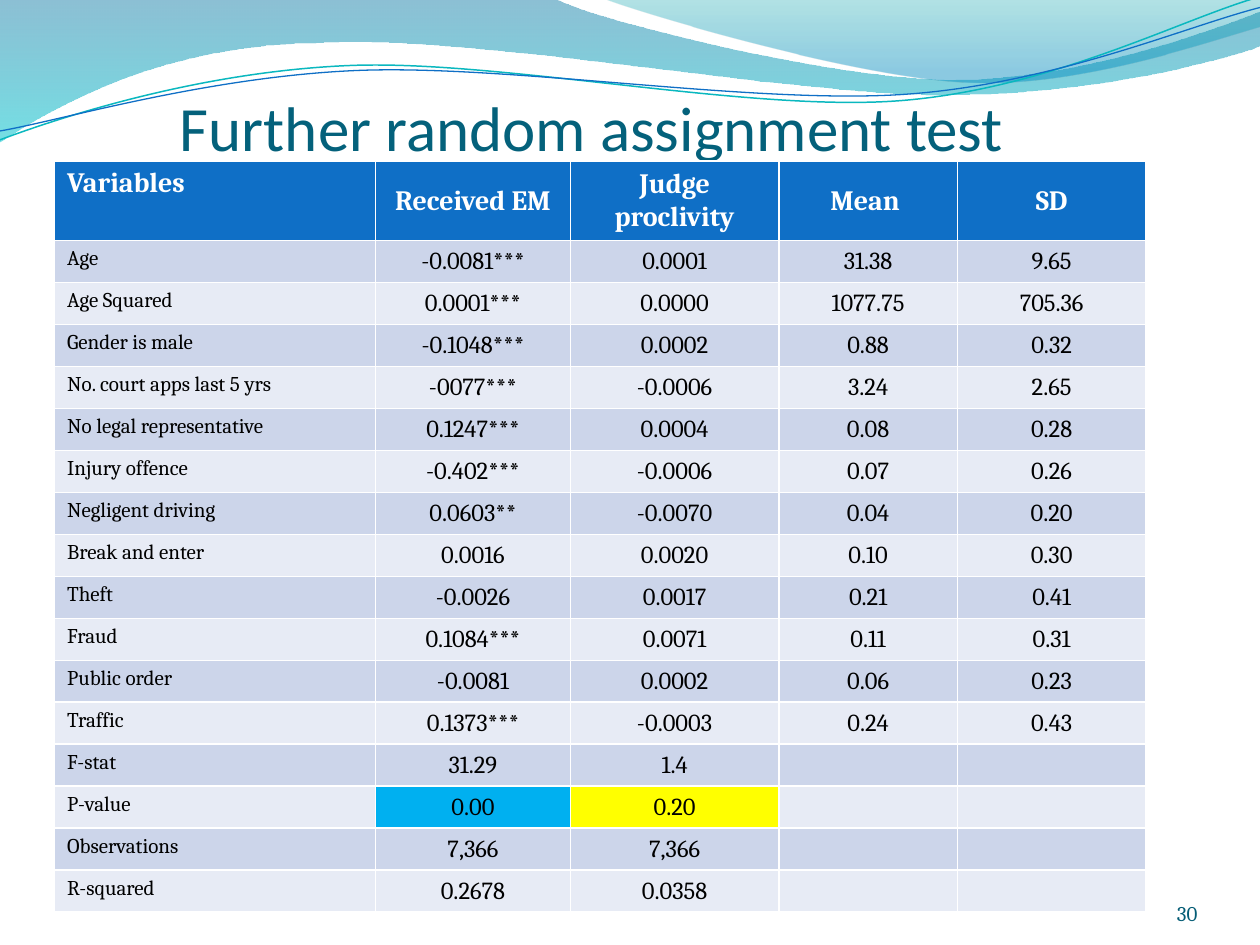
from dataclasses import dataclass
from math import cos, radians, sin

from lxml import etree
from pptx import Presentation
from pptx.dml.color import RGBColor
from pptx.enum.text import MSO_ANCHOR, MSO_AUTO_SIZE, PP_ALIGN
from pptx.oxml.ns import qn
from pptx.util import Cm, Pt

LEFT, CENTER, RIGHT = PP_ALIGN.LEFT, PP_ALIGN.CENTER, PP_ALIGN.RIGHT
TOP, MIDDLE, BOTTOM = MSO_ANCHOR.TOP, MSO_ANCHOR.MIDDLE, MSO_ANCHOR.BOTTOM
NO_AUTOFIT = MSO_AUTO_SIZE.NONE
TITLE_ONLY = 5
GRID = 2.54  # cm per unit of the wave coordinates
TILT = 2.7  # degrees by which the wave lines lean to the left


@dataclass(frozen=True)
class Theme:
    heading_font: str = "Calibri"
    body_font: str = "Cambria"
    title: str = "04617B"
    page_number: str = "045C75"
    header: str = "0F6FC6"
    bands: tuple = ("CCD5EA", "E7EBF5")
    rejected: str = "00B0F0"
    accepted: str = "FFFF00"
    white: str = "FFFFFF"
    black: str = "000000"
    teal_line: str = "0AB8BF"
    blue_line: str = "0F6FC6"
    # Gradient stops: position, colour, opacity in percent
    wide_wave: tuple = ((0, "0074A1", 45), (1, "00C6CF", 55))
    right_wave: tuple = ((0, "00A1A9", 30), (0.8, "008BBF", 45))
    title_size: int = 36
    header_size: int = 16
    value_size: int = 14
    label_size: int = 12


THEME = Theme()

# Waves: start point, then lines (2 numbers) and Bézier curves (6 numbers)
WIDE_WAVE = [
    (0, -0.01), (4.4, -0.01), (4.76, 0.17, 6.64, 0.63, 7.58, 0.63),
    (8.53, 0.63, 9.58, 0.26, 10, 0.09), (10.01, 0.36),
    (9.83, 0.44, 8.7, 0.76, 7.46, 0.75), (6.22, 0.75, 3.82, 0.28, 2.57, 0.34),
    (1.29, 0.35, 0.46, 0.83, -0.01, 1.13),
]
RIGHT_WAVE = [
    (4.79, -0.01), (5.09, 0.11, 6.82, 0.62, 7.69, 0.65),
    (8.56, 0.69, 9.61, 0.32, 10, 0.21), (10, 0),
]
TEAL_LINE = [
    (0, 1.11), (0.48, 0.93, 1.58, 0.57, 2.77, 0.52),
    (3.95, 0.47, 5.93, 0.89, 7.13, 0.8), (8.33, 0.71, 9.38, 0.15, 9.98, -0.02),
]
BLUE_LINE = [
    (0, 1.04), (0.47, 0.96, 1.64, 0.61, 2.83, 0.56),
    (4.03, 0.51, 5.97, 0.83, 7.17, 0.75), (8.36, 0.67, 9.41, 0.21, 10, 0.06),
]
TEAL_PIVOT, BLUE_PIVOT = (4.99, 0.57), (5, 0.59)

HEADINGS = ("Variables", "Received EM", "Judge proclivity", "Mean ", "SD")
RESULTS = [
    ("Age", "-0.0081***", "0.0001", "31.38", "9.65"),
    ("Age Squared", "0.0001***", "0.0000", "1077.75", "705.36"),
    ("Gender is male", "-0.1048***", "0.0002", "0.88", "0.32"),
    ("No. court apps last 5 yrs", "-0077***", "-0.0006", "3.24", "2.65"),
    ("No legal representative", "0.1247***", "0.0004", "0.08", "0.28"),
    ("Injury offence", "-0.402***", "-0.0006", "0.07", "0.26"),
    ("Negligent driving", "0.0603**", "-0.0070", "0.04", "0.20"),
    ("Break and enter", "0.0016", "0.0020", "0.10", "0.30"),
    ("Theft", "-0.0026", "0.0017", "0.21", "0.41"),
    ("Fraud", "0.1084***", "0.0071", "0.11", "0.31"),
    ("Public order", "-0.0081", "0.0002", "0.06", "0.23"),
    ("Traffic", "0.1373***", "-0.0003", "0.24", "0.43"),
    ("F-stat", "31.29", "1.4", "", ""),
    ("P-value", "0.00", "0.20", "", ""),
    ("Observations", "7,366", "7,366", "", ""),
    ("R-squared", "0.2678", "0.0358", "", ""),
]
COLUMN_WIDTHS = (6.47, 3.93, 4.2, 3.6, 3.8)
HEADER_HEIGHT, RESULTS_HEIGHT = 1.6, 13.54


def rgb(colour):
    return RGBColor.from_string(colour)


def format_paragraph(paragraph, font_name, size, colour, align, bold=False):
    paragraph.alignment = align
    font = paragraph.font
    font.name, font.size, font.bold = font_name, Pt(size), bold
    font.color.rgb = rgb(colour)


def turn(point, pivot, angle):
    dx, dy = point[0] - pivot[0], point[1] - pivot[1]
    c, s = cos(radians(angle)), sin(radians(angle))
    return pivot[0] + dx * c - dy * s, pivot[1] + dx * s + dy * c


def add_outline(slide, segments, close, pivot=(0, 0), tilt=0):
    """Draw all nodes as a freeform, then join each curve's three nodes."""
    nodes = [turn(segment[i:i + 2], pivot, tilt)
             for segment in segments for i in range(0, len(segment), 2)]
    start, *others = [(Cm(x * GRID), Cm(y * GRID)) for x, y in nodes]
    builder = slide.shapes.build_freeform(*start)
    builder.add_line_segments(others, close=close)
    outline = builder.convert_to_shape()
    outline.shadow.inherit = False
    outline.rotation = -tilt % 360
    steps = iter(list(outline._element.iter(qn("a:lnTo"))))
    for segment in segments[1:]:
        first = next(steps)
        if len(segment) == 6:
            curve = etree.Element(qn("a:cubicBezTo"))
            first.addprevious(curve)
            for step in (first, next(steps), next(steps)):
                curve.append(step[0])
                step.getparent().remove(step)
    return outline


def add_wave(slide, segments, stops):
    wave = add_outline(slide, segments, close=True)
    wave.line.fill.background()
    wave.fill.gradient()
    wave.fill.gradient_angle = 270
    for stop, (position, colour, _) in zip(wave.fill.gradient_stops, stops):
        stop.position = position
        stop.color.rgb = rgb(colour)
    for element, (_, _, opacity) in zip(wave._element.iter(qn("a:srgbClr")), stops):
        etree.SubElement(element, qn("a:alpha"), val=str(opacity * 1000))


def add_wave_line(slide, segments, pivot, colour, width):
    curve = add_outline(slide, segments, False, pivot, TILT)
    curve.fill.background()
    curve.line.color.rgb = rgb(colour)
    curve.line.width = Pt(width)


def place_title(slide, text):
    title = slide.shapes.title
    title.left, title.top, title.width, title.height = Cm(0.5), Cm(0.13), Cm(22.86), Cm(3.17)
    frame = title.text_frame
    frame.text = text
    frame.auto_size, frame.vertical_anchor = NO_AUTOFIT, BOTTOM
    frame.margin_left = frame.margin_right = frame.margin_bottom = 0
    format_paragraph(frame.paragraphs[0], THEME.heading_font, THEME.title_size, THEME.title, CENTER)
    slide.shapes._spTree.append(title._element)  # in front of the waves


def cell_fill(row, column):
    if row == 0:
        return THEME.header
    if RESULTS[row - 1][0] == "P-value" and column in (1, 2):
        return (THEME.rejected, THEME.accepted)[column - 1]
    return THEME.bands[(row - 1) % 2]


def fill_cell(cell, text, row, column):
    is_header, is_label = row == 0, column == 0
    cell.fill.solid()
    cell.fill.fore_color.rgb = rgb(cell_fill(row, column))
    cell.vertical_anchor = TOP if is_label else MIDDLE
    size = THEME.header_size if is_header else THEME.label_size if is_label else THEME.value_size
    cell.text = text
    paragraph = cell.text_frame.paragraphs[0]
    format_paragraph(paragraph, THEME.body_font, size, THEME.white if is_header else THEME.black,
                     LEFT if is_label else CENTER, is_header)
    if not text:  # keeps empty cells from stretching their row
        etree.SubElement(paragraph._p, qn("a:endParaRPr"), sz=str(size * 100))


def add_results_table(slide):
    rows = [HEADINGS, *RESULTS]
    table = slide.shapes.add_table(len(rows), len(HEADINGS), Cm(1.1), Cm(3.25),
                                   Cm(sum(COLUMN_WIDTHS)), Cm(HEADER_HEIGHT + RESULTS_HEIGHT)).table
    for column, width in zip(table.columns, COLUMN_WIDTHS):
        column.width = Cm(width)
    for r, texts in enumerate(rows):
        table.rows[r].height = Cm(RESULTS_HEIGHT / len(RESULTS) if r else HEADER_HEIGHT)
        for c, text in enumerate(texts):
            fill_cell(table.cell(r, c), text, r, c)


def add_page_number(slide, number):
    frame = slide.shapes.add_textbox(Cm(22.02), Cm(17.65), Cm(2.12), Cm(1.02)).text_frame
    frame.word_wrap, frame.vertical_anchor = True, BOTTOM
    frame.margin_left = frame.margin_top = frame.margin_right = frame.margin_bottom = 0
    frame.text = number
    format_paragraph(frame.paragraphs[0], THEME.body_font, THEME.label_size, THEME.page_number, RIGHT)


def main():
    deck = Presentation()
    deck.slide_width, deck.slide_height = Cm(25.4), Cm(19.05)
    slide = deck.slides.add_slide(deck.slide_layouts[TITLE_ONLY])
    # Wave decoration
    add_wave(slide, WIDE_WAVE, THEME.wide_wave)
    add_wave(slide, RIGHT_WAVE, THEME.right_wave)
    add_wave_line(slide, TEAL_LINE, TEAL_PIVOT, THEME.teal_line, 0.85)
    add_wave_line(slide, BLUE_LINE, BLUE_PIVOT, THEME.blue_line, 0.75)
    # Content
    place_title(slide, "Further random assignment test")
    add_results_table(slide)
    add_page_number(slide, "30")
    deck.save("out.pptx")


if __name__ == "__main__":
    main()
